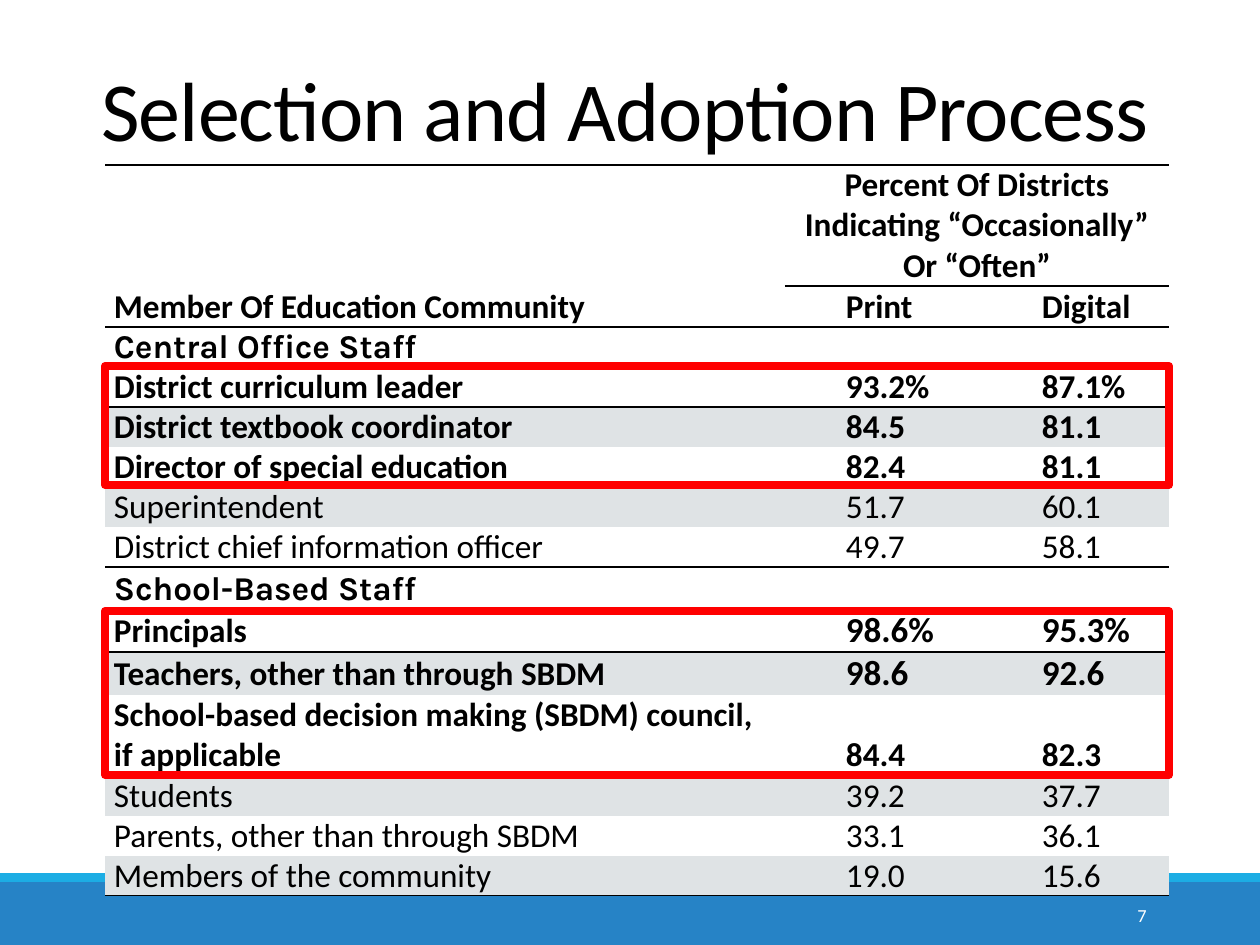
from dataclasses import dataclass

from lxml.etree import SubElement
from pptx import Presentation
from pptx.dml.color import RGBColor
from pptx.enum.shapes import MSO_SHAPE
from pptx.enum.text import MSO_ANCHOR, PP_ALIGN
from pptx.oxml import parse_xml
from pptx.oxml.ns import nsdecls, qn
from pptx.slide import Slide
from pptx.table import Table, _Cell
from pptx.util import Emu, Pt

PIXELS_PER_INCH = 126
BLACK = RGBColor(0x00, 0x00, 0x00)
WHITE = RGBColor(0xFF, 0xFF, 0xFF)
BAND_GRAY = RGBColor(0xDF, 0xE3, 0xE5)
FOOTER_BLUE = RGBColor(0x26, 0x83, 0xC6)
FOOTER_CYAN = RGBColor(0x1C, 0xAD, 0xE4)
HIGHLIGHT_RED = RGBColor(0xFF, 0x00, 0x00)

BODY_FONT = "Calibri"
SECTION_FONT = "Karla"
NO_STYLE = "{2D5ABB26-0587-4C30-8999-92F81FD0307C}"
COLUMN_WIDTHS = (680, 197, 30, 157)
PRINT_COLUMN, DIGITAL_COLUMN = 1, 3
PRINT_INDENT, DIGITAL_INDENT = 52, 21
CELL_MARGIN = 9
RULED_ROWS = (0, 1, 2, 7, 8, 14)


@dataclass(frozen=True)
class Box:
    left: int
    top: int
    width: int
    height: int


@dataclass(frozen=True)
class Row:
    label: str
    print_value: str = ""
    digital_value: str = ""
    height: int = 40
    bold: bool = False
    banded: bool = False
    font: str = BODY_FONT
    value_size: int = 19


ROWS = (
    Row("", "Percent Of Districts Indicating “Occasionally” Or “Often”", height=121, bold=True),
    Row("Member Of Education Community", "Print", "Digital", 41, bold=True),
    Row("Central Office Staff", bold=True, font=SECTION_FONT),
    Row("District curriculum leader", "93.2%", "87.1%", bold=True),
    Row("District textbook coordinator", "84.5", "81.1", bold=True, banded=True),
    Row("Director of special education", "82.4", "81.1", bold=True),
    Row("Superintendent", "51.7", "60.1", banded=True),
    Row("District chief information officer", "49.7", "58.1"),
    Row("School-Based Staff", height=42, bold=True, font=SECTION_FONT),
    Row("Principals", "98.6%", "95.3%", 43, bold=True, value_size=20),
    Row("Teachers, other than through SBDM", "98.6", "92.6", 43, bold=True, banded=True, value_size=20),
    Row("School-based decision making (SBDM) council, if applicable", "84.4", "82.3", 81, bold=True),
    Row("Students", "39.2", "37.7", banded=True),
    Row("Parents, other than through SBDM", "33.1", "36.1"),
    Row("Members of the community", "19.0", "15.6", banded=True),
)
FOOTER_BANDS = ((Box(0, 882, 1260, 63), FOOTER_BLUE), (Box(0, 873, 1260, 9), FOOTER_CYAN))
HIGHLIGHTS = (Box(105, 366, 1064, 119), Box(105, 611, 1064, 164))


def px(value: int) -> Emu:
    return Emu(round(value * 914400 / PIXELS_PER_INCH))


def place(box: Box) -> tuple[Emu, Emu, Emu, Emu]:
    return px(box.left), px(box.top), px(box.width), px(box.height)


def add_band(slide: Slide, box: Box, color: RGBColor) -> None:
    band = slide.shapes.add_shape(MSO_SHAPE.RECTANGLE, *place(box))
    band.shadow.inherit = False
    band.fill.solid()
    band.fill.fore_color.rgb = color
    band.line.fill.background()


def add_highlight(slide: Slide, box: Box) -> None:
    frame = slide.shapes.add_shape(MSO_SHAPE.RECTANGLE, *place(box))
    frame.shadow.inherit = False
    frame.fill.background()
    frame.line.color.rgb = HIGHLIGHT_RED
    frame.line.width = Pt(4.5)


def add_text(slide: Slide, box: Box, text: str, size: float, color: RGBColor,
             alignment: PP_ALIGN, anchor: MSO_ANCHOR):
    """Add a one-paragraph text box and return its paragraph."""
    text_frame = slide.shapes.add_textbox(*place(box)).text_frame
    text_frame.word_wrap = True
    text_frame.vertical_anchor = anchor
    text_frame.text = text
    paragraph = text_frame.paragraphs[0]
    paragraph.alignment = alignment
    font = paragraph.runs[0].font
    font.name, font.size, font.color.rgb = BODY_FONT, Pt(size), color
    return paragraph


def add_border(cell: _Cell, tag: str) -> None:
    border = parse_xml(f'<a:{tag} {nsdecls("a")} w="{Pt(1)}"/>')
    fill = SubElement(border, qn("a:solidFill"))
    SubElement(fill, qn("a:srgbClr"), val=str(BLACK))
    cell._tc.get_or_add_tcPr().insert(0, border)


def style_cell(cell: _Cell, row: Row) -> None:
    cell.margin_left = cell.margin_right = px(CELL_MARGIN)
    cell.margin_top = cell.margin_bottom = 0
    cell.vertical_anchor = MSO_ANCHOR.BOTTOM
    cell.fill.solid()
    cell.fill.fore_color.rgb = BAND_GRAY if row.banded else WHITE


def write_cell(cell: _Cell, text: str, row: Row, size: int = 19, indent: int = 0) -> None:
    if not text:
        return
    cell.text_frame.text = text
    paragraph = cell.text_frame.paragraphs[0]
    if indent:
        paragraph._p.get_or_add_pPr().set("marL", str(px(indent)))
    font = paragraph.runs[0].font
    font.name, font.size, font.bold = row.font, Pt(size), row.bold
    font.color.rgb = BLACK


def draw_rules(table: Table) -> None:
    last_row = len(ROWS) - 1
    for column in range(len(COLUMN_WIDTHS)):
        add_border(table.cell(0, column), "lnT")
        for index in RULED_ROWS:
            if index == 0 and column == 0:
                continue
            if index < last_row:
                add_border(table.cell(index + 1, column), "lnT")
    for column in range(len(COLUMN_WIDTHS)):
        for index in RULED_ROWS:
            if index == 0 and column == 0:
                continue
            cell = table.cell(index, column)
            add_border(cell, "lnB")
            properties = cell._tc.tcPr
            top = properties.find(qn("a:lnT"))
            if top is not None:
                properties.insert(0, top)


def add_adoption_table(slide: Slide) -> None:
    box = Box(105, 165, sum(COLUMN_WIDTHS), sum(row.height for row in ROWS))
    table = slide.shapes.add_table(len(ROWS), len(COLUMN_WIDTHS), *place(box)).table
    table.first_row = table.horz_banding = False
    table._tbl.tblPr.find(qn("a:tableStyleId")).text = NO_STYLE
    for column, width in zip(table.columns, COLUMN_WIDTHS):
        column.width = px(width)
    for index, row in enumerate(ROWS):
        table.rows[index].height = px(row.height)
        for column in range(len(COLUMN_WIDTHS)):
            style_cell(table.cell(index, column), row)
        is_heading = index == 0
        write_cell(table.cell(index, 0), row.label, row)
        write_cell(table.cell(index, PRINT_COLUMN), row.print_value, row, row.value_size,
                   0 if is_heading else PRINT_INDENT)
        write_cell(table.cell(index, DIGITAL_COLUMN), row.digital_value, row, row.value_size,
                   DIGITAL_INDENT)
    heading = table.cell(0, PRINT_COLUMN)
    heading.merge(table.cell(0, DIGITAL_COLUMN))
    heading.text_frame.paragraphs[0].alignment = PP_ALIGN.CENTER
    draw_rules(table)


def main() -> None:
    presentation = Presentation()
    presentation.slide_width, presentation.slide_height = px(1260), px(945)
    slide = presentation.slides.add_slide(presentation.slide_layouts[6])
    for box, color in FOOTER_BANDS:
        add_band(slide, box, color)
    title = add_text(slide, Box(-59, 39, 1386, 126), "Selection and Adoption Process ", 48,
                     BLACK, PP_ALIGN.CENTER, MSO_ANCHOR.BOTTOM)
    title.line_spacing = 0.85
    title.runs[0]._r.get_or_add_rPr().set("spc", "-50")
    add_adoption_table(slide)
    add_text(slide, Box(1023, 890, 136, 50), "7", 10.5, WHITE, PP_ALIGN.RIGHT, MSO_ANCHOR.MIDDLE)
    for box in HIGHLIGHTS:
        add_highlight(slide, box)
    presentation.save("out.pptx")


if __name__ == "__main__":
    main()
